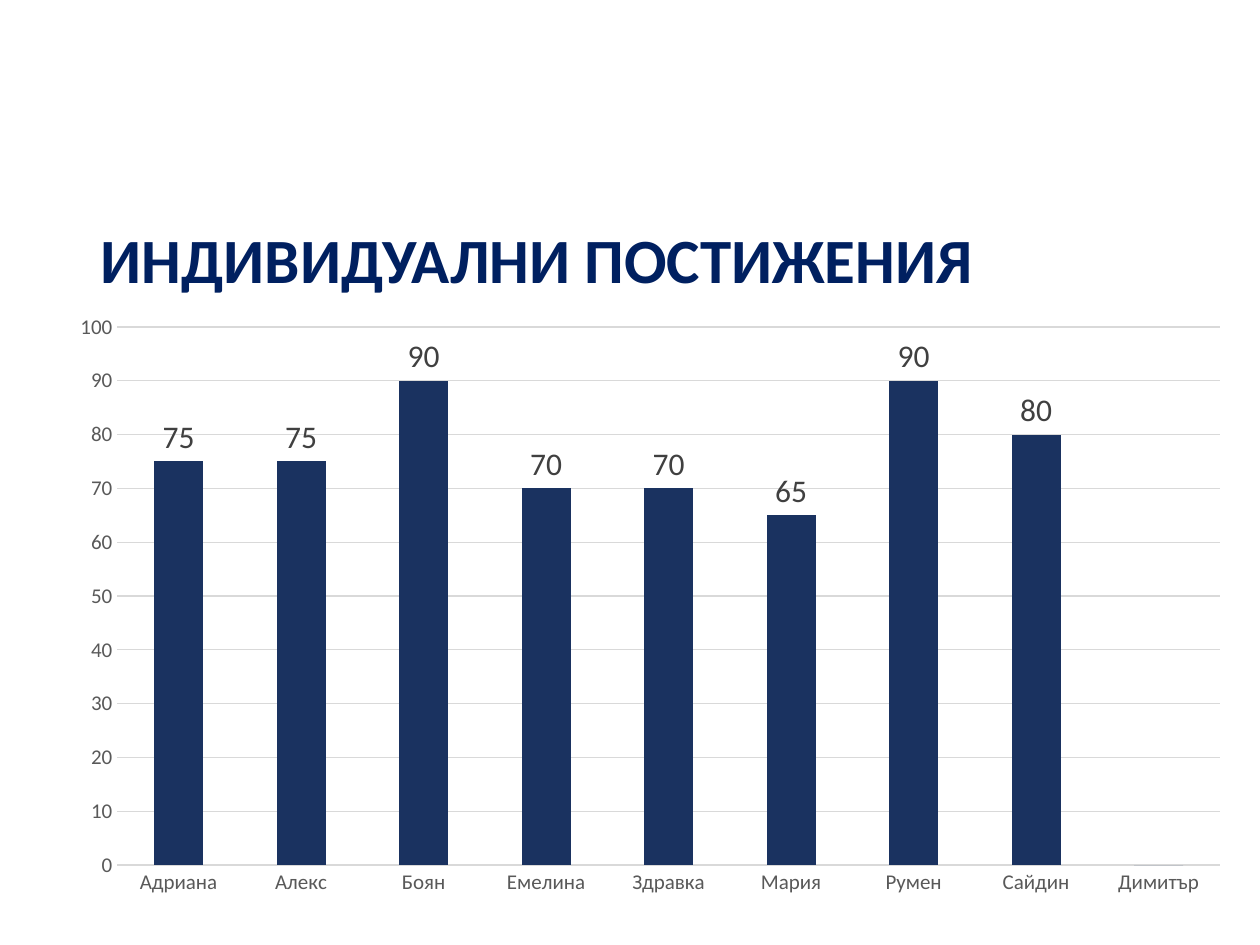
from typing import NamedTuple

from pptx import Presentation
from pptx.chart.data import CategoryChartData
from pptx.dml.color import RGBColor
from pptx.enum.chart import XL_CHART_TYPE as ChartType
from pptx.enum.chart import XL_LABEL_POSITION as LabelPos
from pptx.enum.chart import XL_TICK_MARK as TickMark
from pptx.enum.text import MSO_ANCHOR, PP_ALIGN
from pptx.util import Inches, Pt

FONT = "Calibri"
WIDTH, HEIGHT = Inches(10), Inches(7.5)


class Box(NamedTuple):
    """A frame given as shares of the slide's width and height."""
    left: float
    top: float
    width: float
    height: float

    def emu(self) -> tuple[int, ...]:
        return tuple(int(share * side) for share, side in
                     zip(self, (WIDTH, HEIGHT, WIDTH, HEIGHT)))


class Result(NamedTuple):
    student: str
    points: int


TITLE_BOX = Box(0.07, 0.19, 0.87, 0.13)
CHART_BOX = Box(0.045, 0.32, 0.942, 0.64)
RESULTS = [
    Result("Адриана", 75), Result("Алекс", 75), Result("Боян", 90),
    Result("Емелина", 70), Result("Здравка", 70), Result("Мария", 65),
    Result("Румен", 90), Result("Сайдин", 80), Result("Димитър", 0),
]


def color(value: str) -> RGBColor:
    return RGBColor.from_string(value)


def style_font(font, size: float, value: str, bold: bool = False) -> None:
    font.name, font.size, font.bold = FONT, Pt(size), bold
    font.color.rgb = color(value)


def style_axis(axis) -> None:
    axis.major_tick_mark = axis.minor_tick_mark = TickMark.NONE
    axis.format.line.fill.background()
    style_font(axis.tick_labels.font, 12, "595959")


def add_title(s, text: str) -> None:
    sp = s.shapes.title
    sp.left, sp.top, sp.width, sp.height = TITLE_BOX.emu()
    tf = sp.text_frame
    tf.text = text
    tf.vertical_anchor = MSO_ANCHOR.BOTTOM
    p = tf.paragraphs[0]
    p.alignment = PP_ALIGN.LEFT
    style_font(p.runs[0].font, 36, "002060", bold=True)


def add_results_chart(s, results: list[Result]) -> None:
    data = CategoryChartData()
    data.categories = [result.student for result in results]
    data.add_series("Series 1", [result.points for result in results])
    chart = s.shapes.add_chart(
        ChartType.COLUMN_CLUSTERED, *CHART_BOX.emu(), data).chart
    chart.has_legend = chart.has_title = False
    style_font(chart.font, 10, "000000")

    # Axes and gridlines
    style_axis(chart.category_axis)
    axis = chart.value_axis
    style_axis(axis)
    axis.minimum_scale, axis.maximum_scale, axis.major_unit = 0, 100, 10
    grid = axis.major_gridlines.format.line
    grid.width = Pt(0.75)
    grid.color.rgb = color("D9D9D9")

    # Columns
    plot = chart.plots[0]
    plot.gap_width = 150
    plot.vary_by_categories = False
    series = plot.series[0]
    series.format.fill.solid()
    series.format.fill.fore_color.rgb = color("1A3260")

    # Value labels; the number format leaves zero blank
    labels = series.data_labels
    labels.show_value = True
    labels.position = LabelPos.OUTSIDE_END
    labels.number_format, labels.number_format_is_linked = "0;;", False
    style_font(labels.font, 18, "404040")


def main() -> None:
    prs = Presentation()
    prs.slide_width, prs.slide_height = WIDTH, HEIGHT
    s = prs.slides.add_slide(prs.slide_layouts.get_by_name("Title Only"))
    add_title(s, "ИНДИВИДУАЛНИ ПОСТИЖЕНИЯ")
    add_results_chart(s, RESULTS)
    prs.save("out.pptx")


if __name__ == "__main__":
    main()
